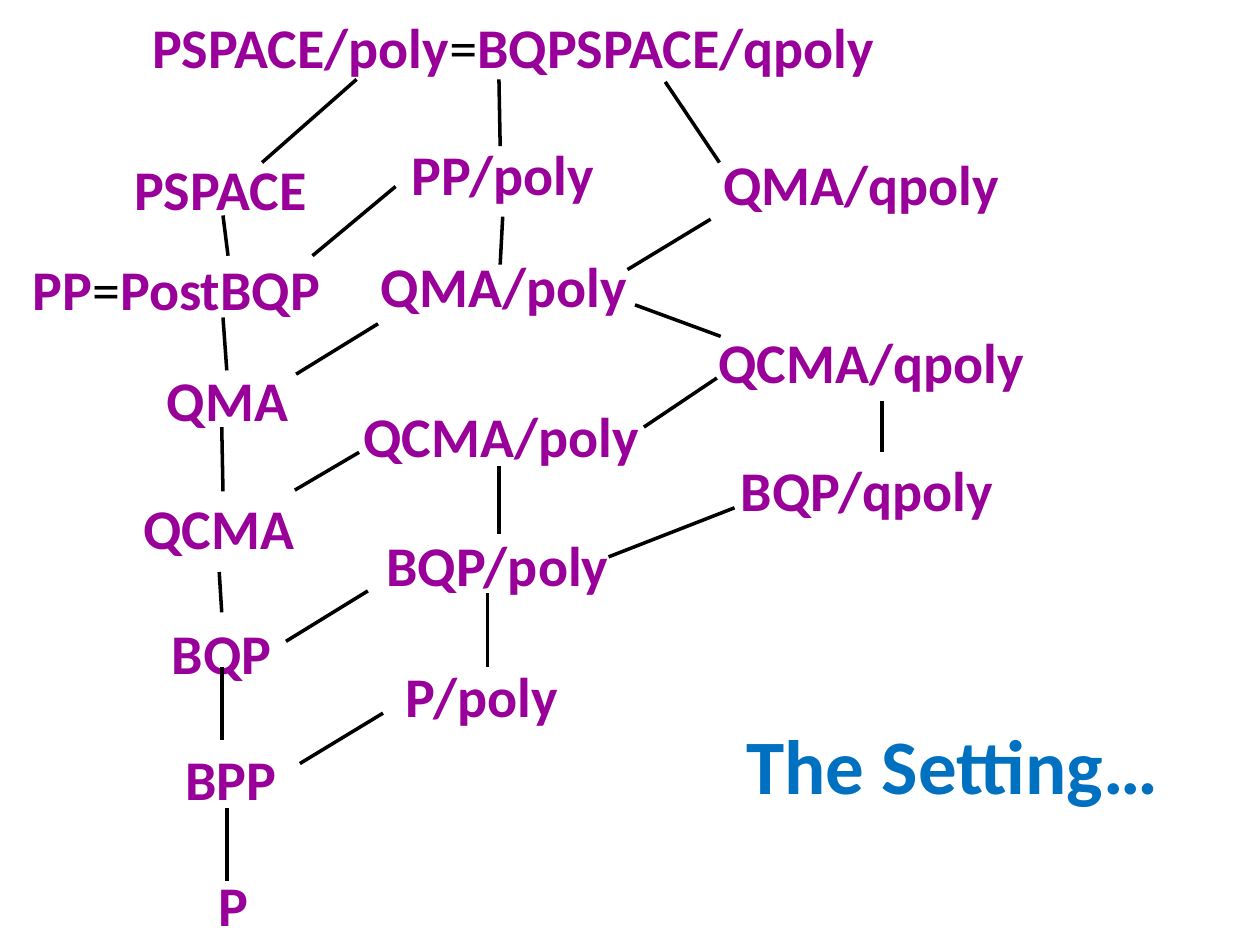
"""Build a slide showing the inclusions between complexity classes."""
from typing import NamedTuple

from lxml import etree
from pptx import Presentation
from pptx import util as u
from pptx.dml.color import RGBColor
from pptx.enum import shapes, text
from pptx.oxml import ns

PURPLE = RGBColor(0x99, 0x00, 0x99)
BLUE = RGBColor(0x00, 0x70, 0xC0)
BLACK = RGBColor(0x00, 0x00, 0x00)
WIDTH, HEIGHT = u.Inches(10), u.Inches(7.5)
COLUMNS, ROWS = 100, 75
LABEL_ROWS = 6.7
LABEL_FONT = {"name": "Calibri", "size": u.Pt(32), "bold": True}
EQUALS_FONT = LABEL_FONT | {"bold": False}
TITLE_FONT = LABEL_FONT | {"size": u.Pt(44)}


class Label(NamedTuple):
    """A complexity class placed in grid columns and rows."""
    words: str
    left: float
    top: float
    width: float


class Link(NamedTuple):
    """An inclusion drawn between two grid points."""
    x1: float
    y1: float
    x2: float
    y2: float


LABELS = [
    Label("PSPACE/poly=BQPSPACE/qpoly", 9.6, 0.5, 62.3),
    Label("PSPACE", 7.1, 11.8, 20.8),
    Label("PP=PostBQP", 0.8, 19.7, 26.4),
    Label("QMA", 10.6, 28.5, 14.9),
    Label("QCMA", 9.9, 38.7, 14.9),
    Label("BQP", 12.5, 48.6, 10.2),
    Label("BPP", 13.2, 58.6, 10.2),
    Label("P", 14.1, 68.6, 8.8),
    Label("PP/poly", 29.9, 10.6, 20),
    Label("QMA/poly", 28.8, 19.5, 22.4),
    Label("QCMA/poly", 27.3, 31.4, 25),
    Label("BQP/poly", 28.3, 41.6, 22.4),
    Label("P/poly", 29.9, 52, 16.7),
    Label("QMA/qpoly", 54.2, 11.4, 28.3),
    Label("QCMA/qpoly", 55.8, 25.5, 26.7),
    Label("BQP/qpoly", 57.6, 35.7, 22.4),
]

LINKS = [
    Link(17.7, 17.1, 18.1, 20.3),
    Link(17.7, 25.2, 18, 29.4),
    Link(17.6, 33.9, 17.7, 39),
    Link(17.4, 45.4, 17.6, 48.6),
    Link(17.6, 52.9, 17.6, 58.7),
    Link(18, 64.1, 18, 69.9),
    Link(39.6, 6.3, 39.7, 11.6),
    Link(39.9, 17.2, 39.7, 21),
    Link(39.6, 37, 39.6, 42.4),
    Link(38.7, 47.1, 38.7, 52.9),
    Link(70, 31.8, 70, 35.9),
    Link(28.3, 6.3, 20.8, 12.9),
    Link(31.4, 14.8, 24.8, 20.3),
    Link(30, 25.7, 23.5, 29.7),
    Link(28.5, 35.9, 23.4, 38.9),
    Link(29.2, 46.9, 22.7, 50.9),
    Link(30.4, 56.6, 23.8, 60.6),
    Link(52.8, 6.5, 57.1, 12.9),
    Link(56.4, 17.4, 49.8, 21.4),
    Link(50.4, 24.2, 57.2, 26.7),
    Link(56.9, 30, 51.1, 33.9),
    Link(58.3, 40.3, 48.3, 44.2),
]


def across(columns: float) -> int:
    """Turn grid columns into a length."""
    return round(WIDTH * columns / COLUMNS)


def down(rows: float) -> int:
    """Turn grid rows into a length."""
    return round(HEIGHT * rows / ROWS)


def apply(target, values: dict) -> None:
    """Set attributes from a dict of format values."""
    for name, value in values.items():
        setattr(target, name, value)


def add_span(para, words: str, font: dict, color: RGBColor) -> None:
    """Add formatted words to a paragraph."""
    span = para.add_run()
    span.text = words
    apply(span.font, font)
    span.font.color.rgb = color


def add_label(page, label: Label) -> None:
    """Draw a class name, with any equals sign plain and black."""
    box = page.shapes.add_textbox(across(label.left), down(label.top),
                                  across(label.width), down(LABEL_ROWS))
    box.text_frame.word_wrap = True
    para = box.text_frame.paragraphs[0]
    para.alignment = text.PP_ALIGN.CENTER
    spacing = etree.SubElement(para._p.get_or_add_pPr(), ns.qn("a:spcBef"))
    etree.SubElement(spacing, ns.qn("a:spcPct"), val="20000")
    for words in filter(None, label.words.partition("=")):
        if words == "=":
            add_span(para, words, EQUALS_FONT, BLACK)
        else:
            add_span(para, words, LABEL_FONT, PURPLE)


def add_link(page, link: Link) -> None:
    """Draw a straight black line without a shadow."""
    line = page.shapes.add_connector(
        shapes.MSO_CONNECTOR.STRAIGHT, across(link.x1), down(link.y1),
        across(link.x2), down(link.y2))
    line.line.color.rgb = BLACK
    line.line.width = u.Pt(2)
    etree.SubElement(line._element.spPr, ns.qn("a:effectLst"))


def set_title(page, words: str) -> None:
    """Move and format the title placeholder."""
    title = page.shapes.title
    apply(title, {"left": across(57), "top": down(55.7),
                  "width": across(37.2), "height": down(9.8)})
    apply(title.text_frame, {"word_wrap": True,
                             "auto_size": text.MSO_AUTO_SIZE.NONE,
                             "vertical_anchor": text.MSO_ANCHOR.MIDDLE})
    para = title.text_frame.paragraphs[0]
    para.alignment = text.PP_ALIGN.CENTER
    add_span(para, words, TITLE_FONT, BLUE)


def main() -> None:
    """Build and save the deck."""
    deck = Presentation()
    apply(deck, {"slide_width": WIDTH, "slide_height": HEIGHT})
    page = deck.slides.add_slide(deck.slide_layouts.get_by_name("Title Only"))
    set_title(page, "The Setting…")
    for label in LABELS:
        add_label(page, label)
    for link in LINKS:
        add_link(page, link)
    deck.save("out.pptx")


if __name__ == "__main__":
    main()
